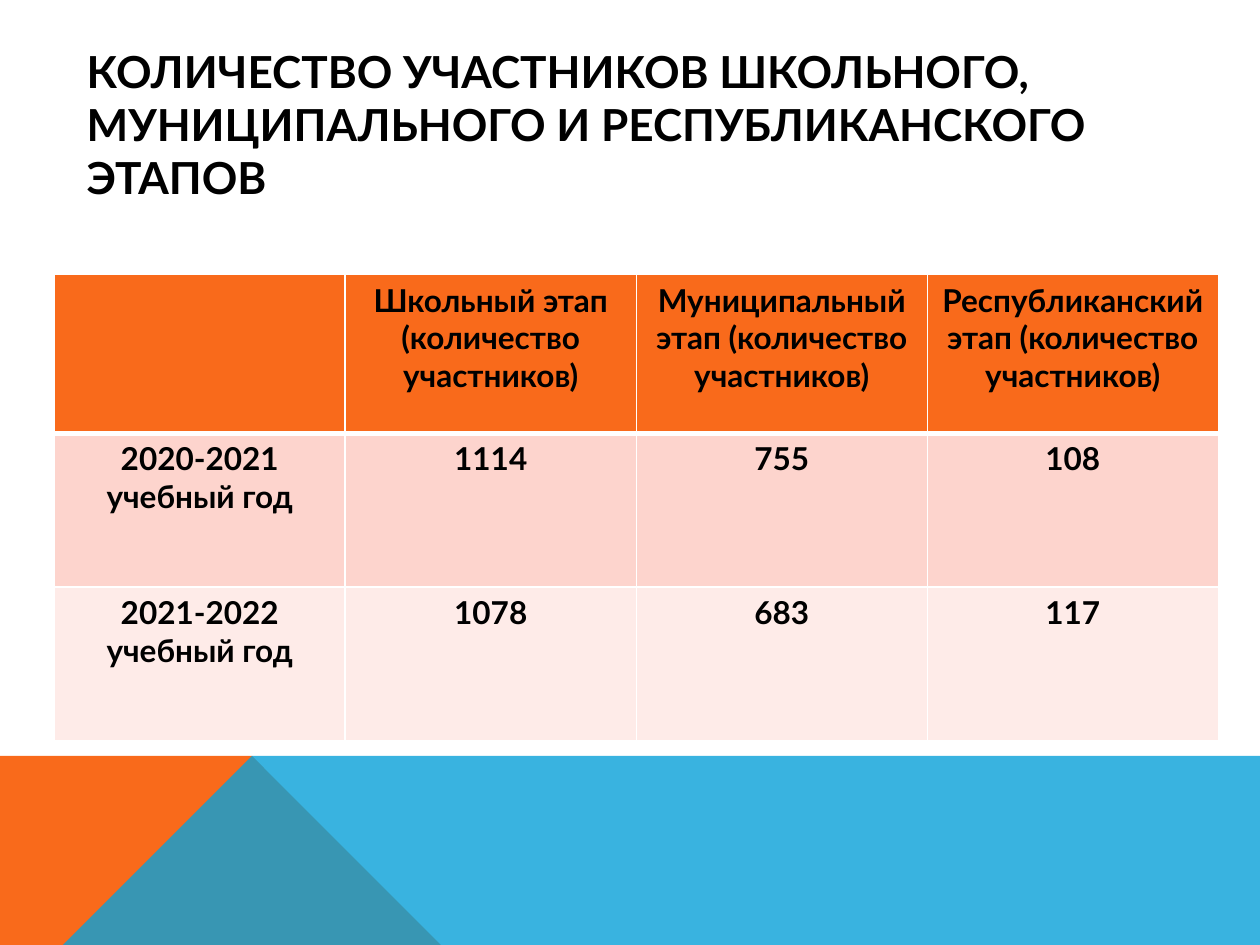
from lxml import etree
from pptx import Presentation, util as u
from pptx.dml.color import RGBColor
from pptx.enum import text
from pptx.oxml.ns import qn

TITLE = "КОЛИЧЕСТВО УЧАСТНИКОВ ШКОЛЬНОГО, МУНИЦИПАЛЬНОГО И РЕСПУБЛИКАНСКОГО ЭТАПОВ"
ROWS = [
    ["", "Школьный этап (количество участников)",
     "Муниципальный этап (количество участников)",
     "Республиканский этап (количество участников)"],
    ["2020-2021 учебный год", "1114", "755", "108"],
    ["2021-2022 учебный год", "1078", "683", "117"],
]
FONT = "Lato"
BLACK = RGBColor(0, 0, 0)
WHITE = RGBColor(255, 255, 255)
ORANGE = RGBColor(0xF9, 0x6A, 0x1B)
BLUE = RGBColor(0x08, 0xA1, 0xD9)
FILLS = [ORANGE, RGBColor(0xFD, 0xD4, 0xCD), RGBColor(0xFE, 0xEB, 0xE8)]
HIGHS = [1.26, 1.22, 1.22]
WIDE, HIGH = 10, 7.5
TOP, PEAK, FOOT = 5.52, 2.23, 3.91
LEFT, HEAD, COL = 0.43, 2.18, 2.31


def band(slide, points, color, alpha=None):
    build = slide.shapes.build_freeform(*points[0], scale=u.Inches(1))
    build.add_line_segments(points[1:], close=True)
    shape = build.convert_to_shape()
    shape.shadow.inherit = False
    shape.line.fill.background()
    shape.fill.solid()
    shape.fill.fore_color.rgb = color
    if alpha:
        tint = shape._element.spPr.find(qn("a:solidFill"))[0]
        etree.SubElement(tint, qn("a:alpha"), val=str(alpha * 1000))


def style(para, size):
    font = para.font
    font.name, font.size, font.bold = FONT, u.Pt(size), True
    font.color.rgb = BLACK


def edge(cell, side, width):
    line = etree.SubElement(cell._tc.get_or_add_tcPr(), qn("a:ln" + side),
                            w=str(u.Pt(width)))
    fill = etree.SubElement(line, qn("a:solidFill"))
    etree.SubElement(fill, qn("a:srgbClr"), val=str(WHITE))


def add_title(slide):
    box = slide.shapes.add_textbox(*map(u.Inches, (0.59, 0.36, 9, 1.25)))
    frame = box.text_frame
    frame.word_wrap = True
    frame.vertical_anchor = text.MSO_ANCHOR.MIDDLE
    frame.text = TITLE
    style(frame.paragraphs[0], 25.2)


def add_grid(slide):
    cols = len(ROWS[0])
    area = map(u.Inches, (LEFT, HEAD, COL * cols, sum(HIGHS)))
    table = slide.shapes.add_table(len(ROWS), cols, *area).table
    for col in table.columns:
        col.width = u.Inches(COL)
    for r, row in enumerate(ROWS):
        table.rows[r].height = u.Inches(HIGHS[r])
        for c, words in enumerate(row):
            cell = table.cell(r, c)
            for side in "LRTB":
                heavy = (r, side) in ((0, "B"), (1, "T"))
                edge(cell, side, 3 if heavy else 1)
            cell.fill.solid()
            cell.fill.fore_color.rgb = FILLS[r]
            cell.text = words
            para = cell.text_frame.paragraphs[0]
            para.alignment = text.PP_ALIGN.CENTER
            style(para, 18)


def main():
    deck = Presentation()
    deck.slide_width, deck.slide_height = u.Inches(WIDE), u.Inches(HIGH)
    slide = deck.slides.add_slide(deck.slide_layouts[6])
    band(slide, [(0, HIGH), (0, TOP), (PEAK, TOP), (FOOT, HIGH)], ORANGE)
    band(slide, [(0, HIGH), (PEAK, TOP), (WIDE, TOP), (WIDE, HIGH)], BLUE, 80)
    add_title(slide)
    add_grid(slide)
    deck.save("out.pptx")


if __name__ == "__main__":
    main()
